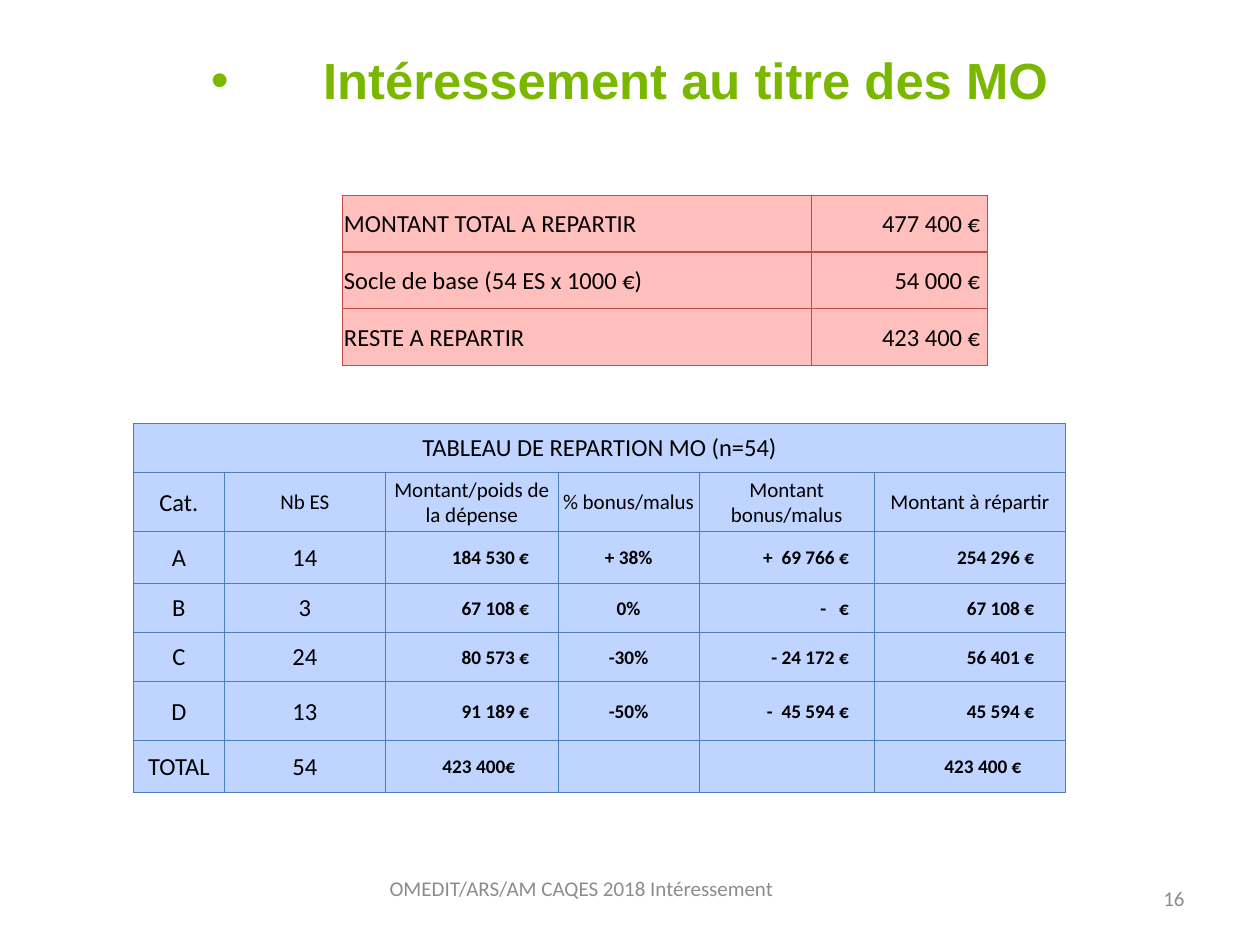
from lxml.etree import SubElement
from pptx import Presentation
from pptx.dml.color import RGBColor
from pptx.enum.text import MSO_ANCHOR as Anchor, PP_ALIGN as Align
from pptx.oxml.ns import qn
from pptx.util import Inches, Pt

BLACK, GREY, GREEN = "000000", "8C8C8C", "7AB800"
ROSE, RED = "FFBFBD", "BF4C48"
SKY, BLUE = "BFD4FF", "4B7EBC"
SUMMARY = [
    ("MONTANT TOTAL A REPARTIR", "477 400 €"),
    ("Socle de base (54 ES x 1000 €)", "54 000 €"),
    ("RESTE A REPARTIR", "423 400 €"),
]
HEADINGS = ["Cat.", "Nb ES", "Montant/poids de la dépense", "% bonus/malus",
            "Montant bonus/malus", "Montant à répartir"]
CATEGORIES = [
    ("A", "14", "184 530 €", "+ 38%", "+  69 766 €", "254 296 €"),
    ("B", "3", "67 108 €", "0%", "-   €", "67 108 €"),
    ("C", "24", "80 573 €", "-30%", "- 24 172 €", "56 401 €"),
    ("D", "13", "91 189 €", "-50%", "-  45 594 €", "45 594 €"),
    ("TOTAL", "54", "423 400€", "", "", "423 400 €"),
]
AMOUNT_MARGINS = {2: 0.23, 4: 0.2, 5: 0.25}
TOTAL_MARGINS = {2: 0.34, 5: 0.35}


def color(value):
    """Turn a hex string into a colour."""
    return RGBColor.from_string(value)


def apply(target, values):
    """Set each attribute in a dict of format values."""
    for name, value in values.items():
        setattr(target, name, value)


def write(frame, text, size, fill, align, face="Calibri", bold=False):
    """Write one formatted paragraph into a text frame."""
    para = frame.paragraphs[0]
    para.alignment = align
    span = para.add_run()
    span.text = text
    apply(span.font, {"size": Pt(size), "name": face, "bold": bold})
    span.font.color.rgb = color(fill)
    return para


def add_title(page, box, text):
    """Place the bulleted title."""
    title = page.shapes.title
    apply(title, dict(zip(("left", "top", "width", "height"), map(Inches, box))))
    frame = title.text_frame
    apply(frame, {"vertical_anchor": Anchor.TOP, "margin_top": Inches(0.09),
                  "word_wrap": True})
    props = frame.paragraphs[0]._p.get_or_add_pPr()
    props.set("marL", str(Inches(0.89)))
    props.set("indent", str(-Inches(0.89)))
    SubElement(props, qn("a:buFont"), typeface="Arial")
    SubElement(props, qn("a:buChar"), char="•")
    write(frame, text, 29, GREEN, Align.CENTER, "Arial", True)


def add_note(page, box, text, align, anchor):
    """Place a grey line at the foot of the page."""
    frame = page.shapes.add_textbox(*map(Inches, box)).text_frame
    apply(frame, {"word_wrap": True, "vertical_anchor": anchor, "margin_top": 0})
    write(frame, text, 12, GREY, align)


def add_grid(page, left, top, widths, heights, fill, line):
    """Place an empty table with filled, bordered cells."""
    box = map(Inches, (left, top, sum(widths), sum(heights)))
    grid = page.shapes.add_table(len(heights), len(widths), *box).table
    for column, width in zip(grid.columns, widths):
        column.width = Inches(width)
    for row, height in zip(grid.rows, heights):
        row.height = Inches(height)
    margins = dict.fromkeys(("margin_left", "margin_right", "margin_top"), Inches(0.01))
    for cell in grid.iter_cells():
        apply(cell, {**margins, "margin_bottom": 0, "vertical_anchor": Anchor.MIDDLE})
        props = cell._tc.get_or_add_tcPr()
        for side in ("lnL", "lnR", "lnT", "lnB"):
            edge = SubElement(props, qn(f"a:{side}"), w=str(Pt(0.75)))
            SubElement(SubElement(edge, qn("a:solidFill")), qn("a:srgbClr"), val=line)
        cell.fill.solid()
        cell.fill.fore_color.rgb = color(fill)
    return grid


def fill_cell(cell, text, size, align=Align.CENTER, bold=False, margin=0.01):
    """Write a cell, keeping the given right margin."""
    cell.margin_right = Inches(margin)
    write(cell.text_frame, text, size, BLACK, align, bold=bold)


def add_summary(page, left, top):
    """Place the table of sums to share out."""
    grid = add_grid(page, left, top, [3.72, 1.4], [0.45] * 3, ROSE, RED)
    for row, (label, amount) in enumerate(SUMMARY):
        fill_cell(grid.cell(row, 0), label, 14, Align.LEFT)
        fill_cell(grid.cell(row, 1), amount, 14, Align.RIGHT, margin=0.06)


def add_breakdown(page, left, top):
    """Place the table of shares by category."""
    grid = add_grid(page, left, top, [0.72, 1.28, 1.37, 1.12, 1.39, 1.52],
                    [0.39, 0.47, 0.41, 0.39, 0.39, 0.47, 0.41], SKY, BLUE)
    grid.cell(0, 0).merge(grid.cell(0, 5))
    fill_cell(grid.cell(0, 0), "TABLEAU DE REPARTION MO (n=54)", 14)
    for column, heading in enumerate(HEADINGS):
        fill_cell(grid.cell(1, column), heading, 12 if column else 14)
    for row, values in enumerate(CATEGORIES, 2):
        margins = TOTAL_MARGINS if values[0] == "TOTAL" else AMOUNT_MARGINS
        for column, text in enumerate(values):
            if text:
                fill_cell(grid.cell(row, column), text, 14 if column < 2 else 11,
                          Align.RIGHT if column in margins else Align.CENTER,
                          column >= 2, margins.get(column, 0.01))


def main():
    """Build and save the deck."""
    deck = Presentation()
    apply(deck, {"slide_width": Inches(10), "slide_height": Inches(7.5)})
    page = deck.slides.add_slide(deck.slide_layouts[5])
    add_title(page, (0.5, 0.3, 9, 1.25), "Intéressement au titre des MO")
    add_note(page, (7.17, 6.95, 2.33, 0.4), "16", Align.RIGHT, Anchor.MIDDLE)
    add_note(page, (2.64, 6.95, 3.95, 0.4), "OMEDIT/ARS/AM CAQES 2018 Intéressement",
             Align.CENTER, Anchor.TOP)
    add_summary(page, 2.72, 1.55)
    add_breakdown(page, 1.06, 3.36)
    deck.save("out.pptx")


if __name__ == "__main__":
    main()
